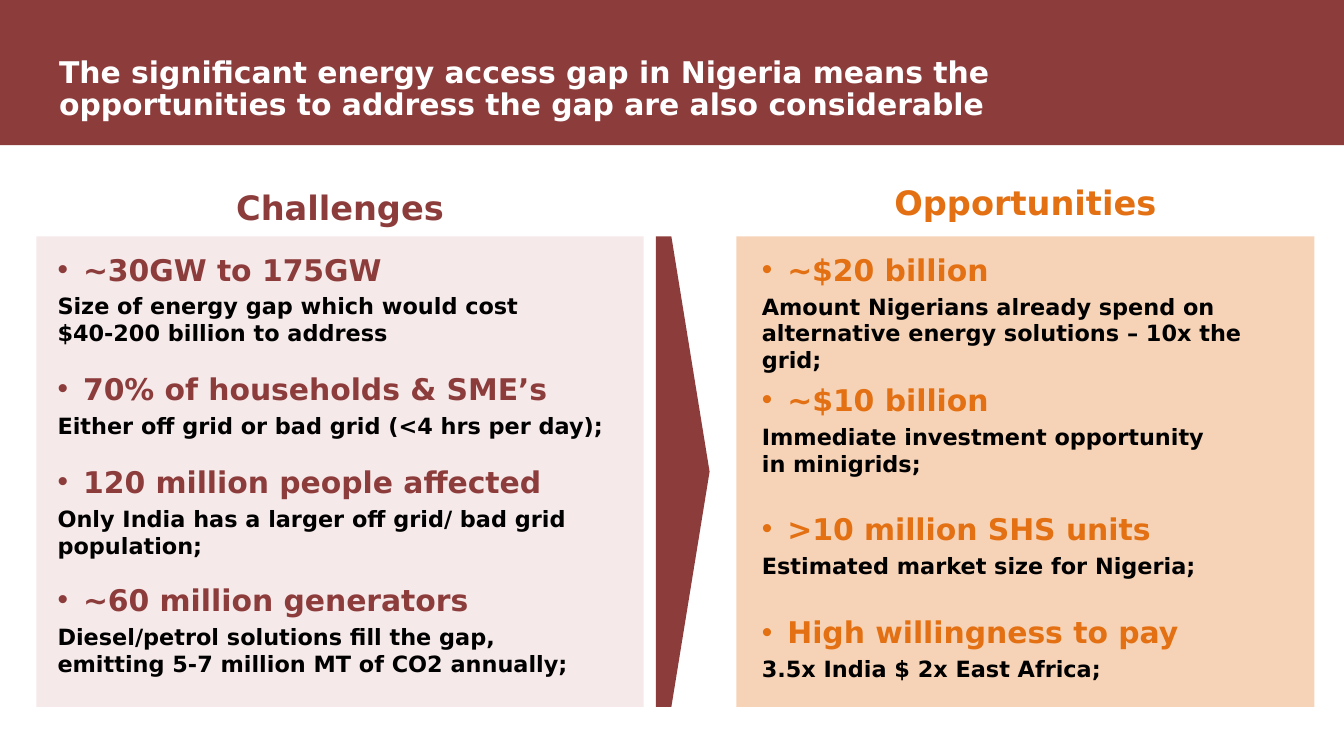
"""Build the slide on Nigeria's energy access challenges and opportunities."""
from dataclasses import dataclass

import pptx
import pptx.dml.color
import pptx.enum.shapes
import pptx.enum.text
import pptx.oxml
import pptx.oxml.ns
import pptx.util

UNIT = 0.1
KIND = pptx.enum.shapes.MSO_SHAPE
ALIGN = pptx.enum.text.PP_ALIGN
FIT = pptx.enum.text.MSO_AUTO_SIZE


@dataclass(frozen=True)
class Theme:
    face: str = "DejaVu Sans"
    red: str = "8D3C3C"
    pink: str = "EDD4D4"
    gold: str = "E37012"
    white: str = "FFFFFF"
    black: str = "000000"
    title: int = 16
    head: int = 18
    fact: int = 16
    note: int = 12


@dataclass(frozen=True)
class Box:
    col: float
    row: float
    cols: float
    rows: float

    def spans(self) -> list[int]:
        sides = (self.col, self.row, self.cols, self.rows)
        return [pptx.util.Inches(side * UNIT) for side in sides]


@dataclass(frozen=True)
class Item:
    row: float
    cols: float
    lines: int
    fact: str
    note: str


@dataclass(frozen=True)
class Panel:
    name: str
    col: float
    cols: float
    inset: float
    ink: str
    fill: str
    alpha: int
    lead: float
    items: tuple[Item, ...]


THEME = Theme()
TOP, DEEP = 17.6, 35

PANELS = (
    Panel("Challenges", 2.7, 45.2, 0.6, THEME.red, THEME.pink, 50, 1.13, (
        Item(18.2, 44.3, 2, "~30GW to 175GW",
             "Size of energy gap which would cost \v$40-200 billion to address"),
        Item(27.1, 44.3, 1, "70% of households & SME’s",
             "Either off grid or bad grid (<4 hrs per day);"),
        Item(34, 42.1, 2, "120 million people affected",
             "Only India has a larger off grid/ bad grid population;"),
        Item(42.8, 41, 2, "~60 million generators",
             "Diesel/petrol solutions fill the gap, "
             "emitting 5-7 million MT of CO2 annually;"),
    )),
    Panel("Opportunities", 54.8, 43, 0.9, THEME.gold, THEME.gold, 30, 1, (
        Item(18.2, 42, 3, "~$20 billion",
             "Amount Nigerians already spend on alternative energy "
             "solutions – 10x the grid;"),
        Item(27.9, 36.5, 2, "~$10 billion",
             "Immediate investment opportunity in minigrids;"),
        Item(37.5, 39.5, 1, ">10 million SHS units",
             "Estimated market size for Nigeria;"),
        Item(45.2, 39.5, 1, "High willingness to pay",
             "3.5x India $ 2x East Africa;"),
    )),
)


def tint(code: str) -> pptx.dml.color.RGBColor:
    return pptx.dml.color.RGBColor.from_string(code)


def style(para, size: int, ink: str) -> None:
    font = para.font
    font.name, font.size, font.bold = THEME.face, pptx.util.Pt(size), True
    font.color.rgb = tint(ink)


def clear(frame) -> None:
    frame.margin_left = frame.margin_right = 0
    frame.margin_top = frame.margin_bottom = 0


def block(slide, kind, box: Box, ink: str, alpha: int = 100):
    shape = slide.shapes.add_shape(kind, *box.spans())
    shape.shadow.inherit = False
    shape.fill.solid()
    shape.fill.fore_color.rgb = tint(ink)
    shape.line.fill.background()
    if alpha < 100:
        fill = shape._element.spPr.find(pptx.oxml.ns.qn("a:solidFill"))
        fill[0].append(pptx.oxml.parse_xml(
            f'<a:alpha {pptx.oxml.ns.nsdecls("a")} val="{alpha * 1000}"/>'))
    return shape


def bullet(para, ink: str) -> None:
    space = pptx.oxml.ns.nsdecls("a")
    props = para._p.get_or_add_pPr()
    dent = pptx.util.Inches(0.19)
    props.set("marL", str(dent))
    props.set("indent", str(-dent))
    for mark in (f'<a:buClr {space}><a:srgbClr val="{ink}"/></a:buClr>',
                 f'<a:buFont {space} typeface="Arial"/>',
                 f'<a:buChar {space} char="•"/>'):
        props.append(pptx.oxml.parse_xml(mark))


def header(slide) -> None:
    title = slide.shapes.title
    bar = block(slide, KIND.RECTANGLE, Box(0, 0, 100, 10.8), THEME.red)
    title._element.addprevious(bar._element)
    title.left, title.top, title.width, title.height = Box(
        4.4, 0.5, 83.5, 8.6).spans()
    frame = title.text_frame
    clear(frame)
    frame.word_wrap, frame.auto_size = True, FIT.NONE
    frame.vertical_anchor = pptx.enum.text.MSO_ANCHOR.BOTTOM
    para = frame.paragraphs[0]
    para.text = ("The significant energy access gap in Nigeria means the "
                 "opportunities to address the gap are also considerable")
    para.alignment, para.line_spacing = ALIGN.LEFT, 0.9
    style(para, THEME.title, THEME.white)


def entry(slide, item: Item, col: float, ink: str) -> None:
    box = Box(col, item.row, item.cols, 4.05 + 2.05 * item.lines)
    frame = slide.shapes.add_textbox(*box.spans()).text_frame
    frame.word_wrap, frame.auto_size = True, FIT.SHAPE_TO_FIT_TEXT
    fact, note = frame.paragraphs[0], frame.add_paragraph()
    fact.text, note.text = item.fact, item.note
    fact.space_after = pptx.util.Pt(3)
    bullet(fact, ink)
    style(fact, THEME.fact, ink)
    style(note, THEME.note, THEME.black)


def column(slide, panel: Panel) -> None:
    box = Box(panel.col, 13.5, panel.cols, 3.8)
    frame = slide.shapes.add_textbox(*box.spans()).text_frame
    frame.word_wrap = True
    clear(frame)
    para = frame.paragraphs[0]
    para.text = panel.name
    para.alignment, para.line_spacing = ALIGN.CENTER, panel.lead
    style(para, THEME.head, panel.ink)
    block(slide, KIND.RECTANGLE, Box(panel.col, TOP, panel.cols, DEEP),
          panel.fill, panel.alpha)
    for item in panel.items:
        entry(slide, item, panel.col + panel.inset, panel.ink)


def main() -> None:
    deck = pptx.Presentation()
    deck.slide_width = pptx.util.Inches(10)
    deck.slide_height = deck.slide_width * 9 // 16
    slide = deck.slides.add_slide(deck.slide_layouts[5])
    header(slide)
    arrow = block(slide, KIND.PENTAGON, Box(48.8, TOP, 4, DEEP), THEME.red)
    arrow.adjustments[0] = 0.71
    for panel in PANELS:
        column(slide, panel)
    deck.save("out.pptx")


if __name__ == "__main__":
    main()
